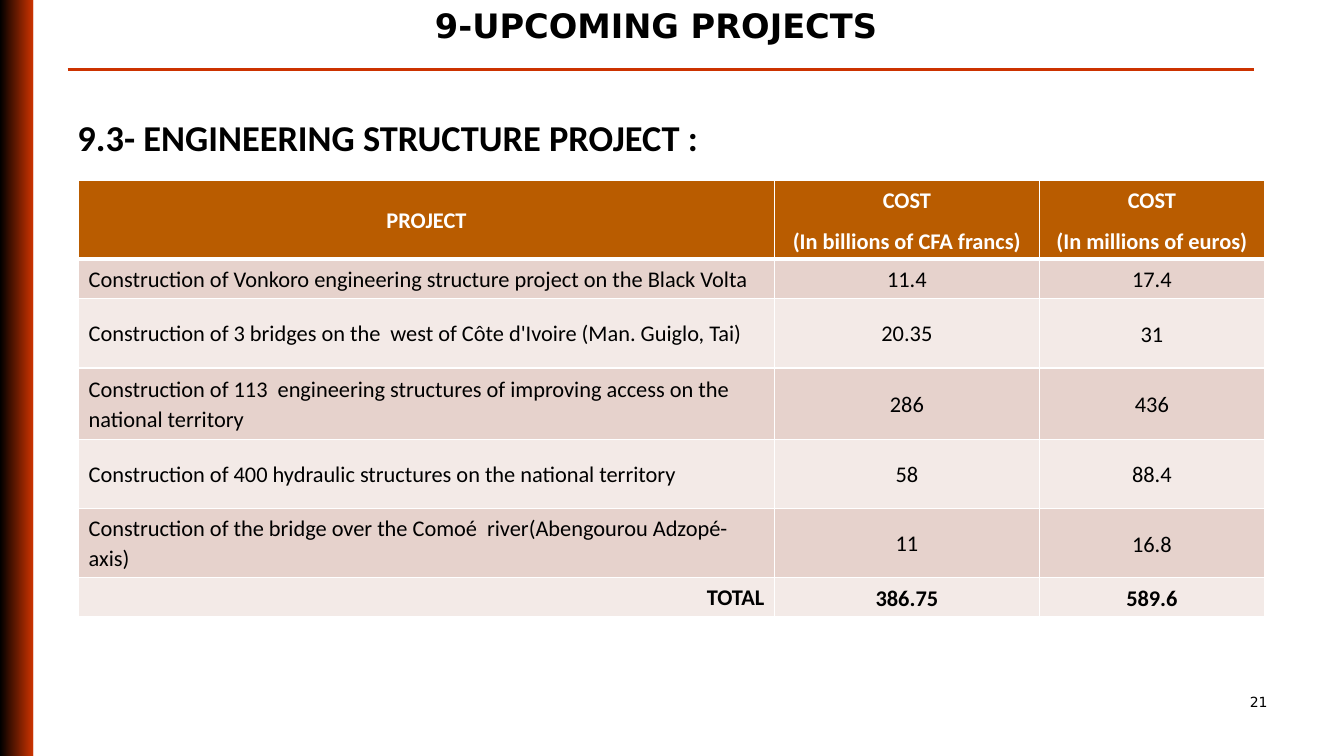
from dataclasses import dataclass

from lxml.etree import SubElement
from pptx import Presentation
from pptx.dml.color import RGBColor
from pptx.enum.shapes import MSO_CONNECTOR, MSO_SHAPE
from pptx.enum.text import MSO_ANCHOR, PP_ALIGN
from pptx.oxml.ns import qn
from pptx.util import Inches, Pt


@dataclass(frozen=True)
class Theme:
    black: str = "000000"
    white: str = "FFFFFF"
    accent: str = "CC3300"
    header: str = "B95C00"
    bands: tuple = ("E6D2CC", "F3EAE7")
    body_font: str = "Calibri"
    title_font: str = "DejaVu Sans"
    title_size: int = 24
    heading_size: int = 26
    table_size: int = 16
    number_size: int = 10


THEME = Theme()

COLUMN_WIDTHS = (6.9, 2.63, 2.23)
ROW_HEIGHTS = (0.69, 0.39, 0.69, 0.71, 0.68, 0.69, 0.39)
ROWS = (
    ("PROJECT", "COST\n(In billions of CFA francs)", "COST\n(In millions of euros)"),
    ("Construction of Vonkoro engineering structure project on the Black Volta", "11.4", "17.4"),
    ("Construction of 3 bridges on the  west of Côte d'Ivoire (Man. Guiglo, Tai)", "20.35", "31"),
    ("Construction of 113  engineering structures of improving access on the national territory",
     "286", "436"),
    ("Construction of 400 hydraulic structures on the national territory", "58", "88.4"),
    ("Construction of the bridge over the Comoé  river(Abengourou Adzopé-axis)", "11", "16.8"),
    ("TOTAL", "386.75", "589.6"),
)


def set_attrs(obj, values):
    for name, value in values.items():
        setattr(obj, name, value)


def write(tf, text, size, font, color=THEME.black, bold=False, **paragraph_format):
    """Fill a text frame, one paragraph for each line of text."""
    for i, line in enumerate(text.split("\n")):
        p = tf.paragraphs[0] if i == 0 else tf.add_paragraph()
        set_attrs(p, paragraph_format)
        r = p.add_run()
        r.text = line
        set_attrs(r.font, {"size": Pt(size), "name": font, "bold": bold})
        r.font.color.rgb = RGBColor.from_string(color)


def add_text(s, box, text, size, font, **fmt):
    tf = s.shapes.add_textbox(*map(Inches, box)).text_frame
    tf.word_wrap = True
    write(tf, text, size, font, **fmt)


def add_side_panel(s, top, height):
    sp = s.shapes.add_shape(MSO_SHAPE.RECTANGLE, 0, Inches(top), Inches(0.33), Inches(height))
    sp.shadow.inherit = False
    sp.line.fill.background()
    sp.fill.gradient()
    sp.fill.gradient_angle = 0
    for stop, color in zip(sp.fill.gradient_stops, (THEME.black, THEME.accent)):
        stop.color.rgb = RGBColor.from_string(color)


def add_rule(s, left, right, y):
    line = s.shapes.add_connector(
        MSO_CONNECTOR.STRAIGHT, Inches(left), Inches(y), Inches(right), Inches(y))
    line.line.color.rgb = RGBColor.from_string(THEME.accent)
    line.line.width = Pt(2.25)
    SubElement(line._element.spPr, qn("a:effectLst"))


def add_borders(cell, widths):
    tcPr = cell._tc.get_or_add_tcPr()
    for side, width in widths.items():
        ln = SubElement(tcPr, qn(f"a:ln{side}"), w=str(Pt(width)))
        SubElement(SubElement(ln, qn("a:solidFill")), qn("a:srgbClr"), val=THEME.white)


def format_cell(cell, text, row, col):
    is_header, is_total = row == 0, row == len(ROWS) - 1
    # Borders go in ahead of the fill, as the schema orders them
    add_borders(cell, {"L": 1, "R": 1, "T": 3 if row == 1 else 1, "B": 3 if is_header else 1})
    cell.fill.solid()
    fill = THEME.header if is_header else THEME.bands[(row - 1) % 2]
    cell.fill.fore_color.rgb = RGBColor.from_string(fill)
    cell.vertical_anchor = MSO_ANCHOR.MIDDLE
    if not is_header and (col == 2 or (is_total and col == 1)):
        tight = Inches(0.01)
        set_attrs(cell, {"margin_left": tight, "margin_top": tight,
                         "margin_right": tight, "margin_bottom": 0})
    if is_header or col > 0:
        align = PP_ALIGN.CENTER
    else:
        align = PP_ALIGN.RIGHT if is_total else PP_ALIGN.LEFT
    write(cell.text_frame, text, THEME.table_size, THEME.body_font,
          color=THEME.white if is_header else THEME.black, bold=is_header or is_total,
          alignment=align, line_spacing=1.07, space_after=Pt(8))


def add_cost_table(s, left, top):
    table = s.shapes.add_table(
        len(ROWS), len(COLUMN_WIDTHS), Inches(left), Inches(top),
        Inches(sum(COLUMN_WIDTHS)), Inches(sum(ROW_HEIGHTS))).table
    set_attrs(table, {"first_row": False, "horz_banding": False})
    for column, width in zip(table.columns, COLUMN_WIDTHS):
        column.width = Inches(width)
    for row, height in zip(table.rows, ROW_HEIGHTS):
        row.height = Inches(height)
    for i, texts in enumerate(ROWS):
        for j, text in enumerate(texts):
            format_cell(table.cell(i, j), text, i, j)


def main():
    prs = Presentation()
    set_attrs(prs, {"slide_width": Inches(13.33), "slide_height": Inches(7.5)})
    s = prs.slides.add_slide(prs.slide_layouts[6])

    # Side band and title rule
    for i in range(3):
        add_side_panel(s, 2.5 * i, 2.5)
    add_rule(s, 0.67, 12.44, 0.69)

    # Heading, page number and title
    add_text(s, (0.67, 1.09, 12, 6.01), "9.3- ENGINEERING STRUCTURE PROJECT :",
             THEME.heading_size, THEME.body_font, bold=True)
    add_text(s, (9.56, 6.83, 3.11, 0.5), "21", THEME.number_size, THEME.title_font,
             alignment=PP_ALIGN.RIGHT)
    add_text(s, (0.75, 0, 11.63, 0.98), "9-UPCOMING PROJECTS ", THEME.title_size,
             THEME.title_font, bold=True, alignment=PP_ALIGN.CENTER)

    # Project costs
    add_cost_table(s, 0.78, 1.79)

    prs.save("out.pptx")


if __name__ == "__main__":
    main()
